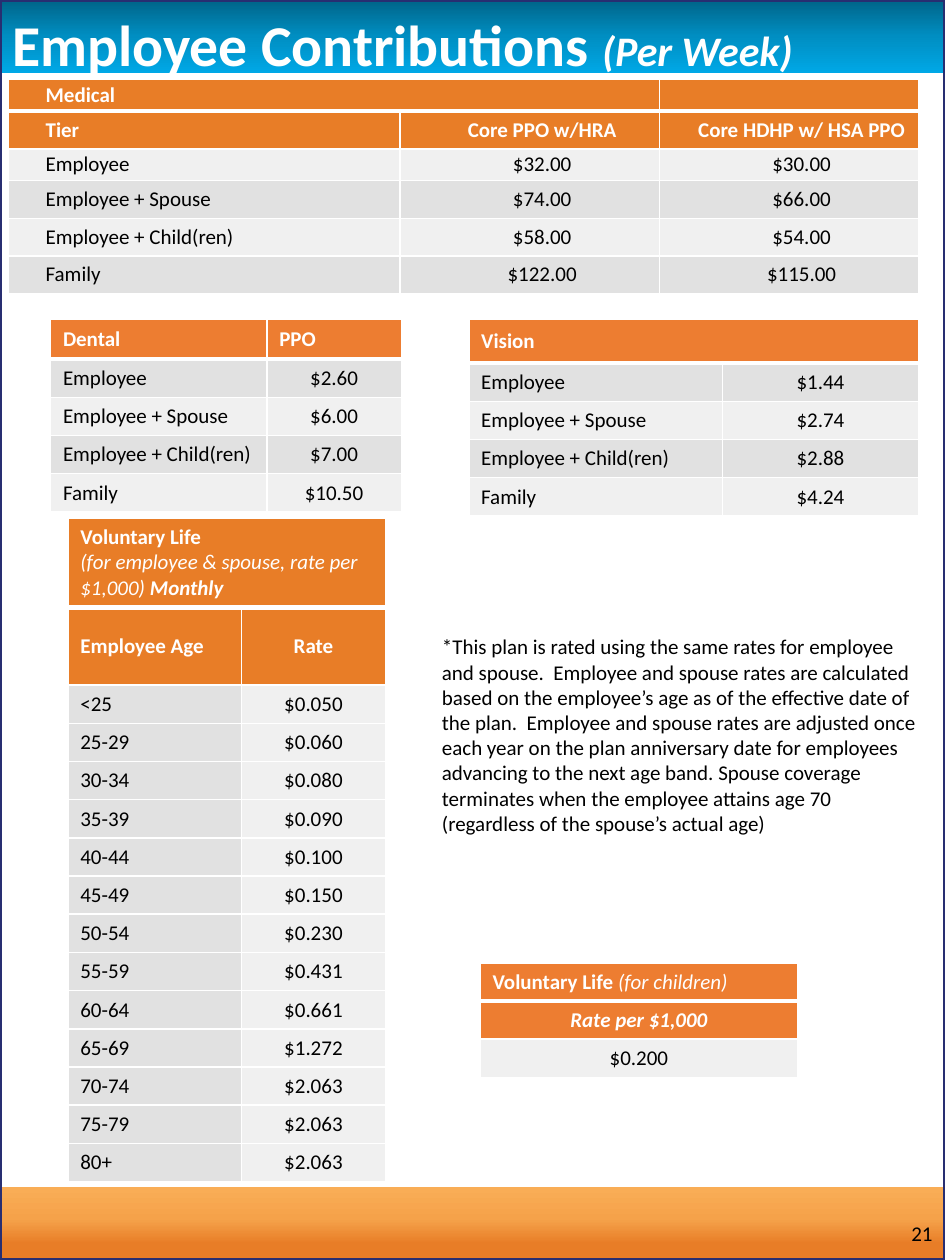
from dataclasses import dataclass
from typing import Callable, Optional

import pptx
import pptx.dml.color
import pptx.enum.shapes
import pptx.enum.text
import pptx.oxml.ns
import pptx.util
from lxml import etree
from pptx.util import Cm

FONT = "Calibri"
WHITE, BLACK = "FFFFFF", "000000"
ORANGE, BRIGHT_ORANGE = "E87D27", "ED7D31"
LIGHT, DARK = "F0F0F0", "E1E1E1"
LEFT = pptx.enum.text.PP_ALIGN.LEFT
CENTER = pptx.enum.text.PP_ALIGN.CENTER
RIGHT = pptx.enum.text.PP_ALIGN.RIGHT
TOP = pptx.enum.text.MSO_ANCHOR.TOP
MIDDLE = pptx.enum.text.MSO_ANCHOR.MIDDLE
RECTANGLE = pptx.enum.shapes.MSO_SHAPE.RECTANGLE
ROW = 0.77
qn = pptx.oxml.ns.qn


@dataclass
class Run:
    text: str
    bold: bool = False
    italic: bool = False
    size: float = 12


@dataclass
class Heading:
    paragraphs: list[list[Run]]
    align: int = LEFT


@dataclass
class RateTable:
    left: float
    top: float
    widths: list[float]
    heights: list[float]
    headings: list[list[Optional[Heading]]]
    rates: list[tuple[str, ...]]
    accent: str
    band: Callable[[int, int], str]
    margins: tuple[float, float, float, float] = (0.25, 0.13, 0.25, 0.13)
    title_span: int = 1


def rgb(value: str) -> pptx.dml.color.RGBColor:
    return pptx.dml.color.RGBColor.from_string(value)


def write(frame, paragraphs: list[list[Run]], color: str, align: int) -> None:
    for index, runs in enumerate(paragraphs):
        paragraph = frame.paragraphs[0] if index == 0 else frame.add_paragraph()
        paragraph.alignment = align
        for part in runs:
            run = paragraph.add_run()
            run.text = part.text
            font = run.font
            font.name, font.size = FONT, pptx.util.Pt(part.size)
            font.bold, font.italic = part.bold, part.italic
            font.color.rgb = rgb(color)


def add_text(slide, box: tuple, runs: list[Run], color: str = BLACK, align: int = LEFT,
             anchor: int = TOP, top_margin: float = 0.13):
    frame = slide.shapes.add_textbox(*map(Cm, box)).text_frame
    frame.word_wrap = True
    frame.vertical_anchor = anchor
    frame.margin_top = Cm(top_margin)
    write(frame, [runs], color, align)
    return frame


def add_band(slide, top: float, height: float, stops: list[tuple[int, str]]) -> None:
    """Full-width bar with a gradient running downwards."""
    bar = slide.shapes.add_shape(RECTANGLE, 0, Cm(top), Cm(19.05), Cm(height))
    bar.shadow.inherit = False
    bar.line.fill.background()
    bar.fill.gradient()
    gradient = bar.fill._xPr.find(qn("a:gradFill"))
    for child in list(gradient):
        gradient.remove(child)
    stop_list = etree.SubElement(gradient, qn("a:gsLst"))
    for percent, color in stops:
        stop = etree.SubElement(stop_list, qn("a:gs"), pos=str(percent * 1000))
        etree.SubElement(stop, qn("a:srgbClr"), val=color)
    etree.SubElement(gradient, qn("a:lin"), ang="5400000", scaled="0")


def set_borders(cell, row: int) -> None:
    """White rules, heavier under the first row."""
    properties = cell._tc.get_or_add_tcPr()
    points = {"lnL": 1, "lnR": 1, "lnT": 3 if row == 1 else 1, "lnB": 3 if row == 0 else 1}
    for side, width in points.items():
        line = etree.SubElement(properties, qn(f"a:{side}"), w=str(pptx.util.Pt(width)))
        fill = etree.SubElement(line, qn("a:solidFill"))
        etree.SubElement(fill, qn("a:srgbClr"), val=WHITE)


def style_cell(cell, row: int, fill: str, margins: tuple) -> None:
    set_borders(cell, row)
    cell.fill.solid()
    cell.fill.fore_color.rgb = rgb(fill)
    cell.vertical_anchor = MIDDLE
    cell.margin_left, cell.margin_top, cell.margin_right, cell.margin_bottom = map(Cm, margins)


def add_rates(slide, plan: RateTable) -> None:
    grid = slide.shapes.add_table(
        len(plan.heights), len(plan.widths), Cm(plan.left), Cm(plan.top),
        Cm(sum(plan.widths)), Cm(sum(plan.heights))).table
    grid.first_row = grid.horz_banding = False
    for column, width in zip(grid.columns, plan.widths):
        column.width = Cm(width)
    for line, height in zip(grid.rows, plan.heights):
        line.height = Cm(height)

    for row, headings in enumerate(plan.headings):
        for col, heading in enumerate(headings):
            cell = grid.cell(row, col)
            style_cell(cell, row, plan.accent, plan.margins)
            if heading:
                write(cell.text_frame, heading.paragraphs, WHITE, heading.align)
            else:
                etree.SubElement(cell.text_frame.paragraphs[0]._p, qn("a:endParaRPr"), sz="1200")

    for index, values in enumerate(plan.rates):
        row = index + len(plan.headings)
        for col, value in enumerate(values):
            cell = grid.cell(row, col)
            style_cell(cell, row, plan.band(index, col), plan.margins)
            write(cell.text_frame, [[Run(value)]], BLACK, CENTER if value[0] == "$" else LEFT)

    if plan.title_span > 1:
        grid.cell(0, 0).merge(grid.cell(0, plan.title_span - 1))


def label(text: str, align: int = LEFT) -> Heading:
    return Heading([[Run(text, bold=True)]], align)


def light_first(row: int, col: int) -> str:
    return (LIGHT, DARK)[row % 2]


def dark_first(row: int, col: int) -> str:
    return (DARK, LIGHT)[row % 2]


def by_column(row: int, col: int) -> str:
    return (DARK, LIGHT)[col]


TIERS = ["Employee", "Employee + Spouse", "Employee + Child(ren)", "Family"]
AGES = ["<25", *(f"{age}-{age + 4}" for age in range(25, 80, 5)), "80+"]
LIFE_RATES = ["$0.050", "$0.060", "$0.080", "$0.090", "$0.100", "$0.150", "$0.230",
              "$0.431", "$0.661", "$1.272", "$2.063", "$2.063", "$2.063"]

PLANS = [
    # Medical
    RateTable(0.16, 1.6, [7.9, 5.23, 5.23], [0.64, 0.76, 0.64, 0.76, 0.76, 0.76],
              [[label("Medical"), None, None],
               [label("Tier"), label("Core PPO w/HRA", CENTER),
                label("Core HDHP w/ HSA PPO", CENTER)]],
              list(zip(TIERS, ["$32.00", "$74.00", "$58.00", "$122.00"],
                       ["$30.00", "$66.00", "$54.00", "$115.00"])),
              ORANGE, light_first, (0.76, 0, 0.25, 0), title_span=2),
    # Dental
    RateTable(1.02, 6.43, [4.36, 2.71], [0.81] + [ROW] * 4,
              [[label("Dental"), label("PPO")]],
              list(zip(TIERS, ["$2.60", "$6.00", "$7.00", "$10.50"])),
              BRIGHT_ORANGE, dark_first),
    # Vision
    RateTable(9.45, 6.43, [5.11, 3.96], [0.89] + [ROW] * 4,
              [[label("Vision"), None]],
              list(zip(TIERS, ["$1.44", "$2.74", "$2.88", "$4.24"])),
              BRIGHT_ORANGE, dark_first, title_span=2),
    # Voluntary life for employee and spouse
    RateTable(1.37, 10.44, [3.5, 2.9], [1.8, 1.57] + [ROW] * len(AGES),
              [[Heading([[Run("Voluntary Life", bold=True)],
                         [Run("(for employee & spouse, rate per $1,000) ", italic=True),
                          Run("Monthly", bold=True, italic=True)]]), None],
               [label("Employee Age"), label("Rate", CENTER)]],
              list(zip(AGES, LIFE_RATES)), ORANGE, by_column, title_span=2),
    # Voluntary life for children
    RateTable(9.68, 19.41, [6.4], [0.75, ROW, ROW],
              [[Heading([[Run("Voluntary Life ", bold=True),
                          Run("(for children)", italic=True)]])],
               [Heading([[Run("Rate per $1,000", bold=True, italic=True)]], CENTER)]],
              [("$0.200",)], BRIGHT_ORANGE, light_first),
]

NOTE = ("*This plan is rated using the same rates for employee and spouse.  Employee and spouse "
        "rates are calculated based on the employee’s age as of the effective date of the plan.  "
        "Employee and spouse rates are adjusted once each year on the plan anniversary date for "
        "employees advancing to the next age band. Spouse coverage terminates when the employee "
        "attains age 70 (regardless of the spouse’s actual age)")


def main() -> None:
    deck = pptx.Presentation()
    deck.slide_width, deck.slide_height = Cm(19.05), Cm(25.4)
    slide = deck.slides.add_slide(deck.slide_layouts[6])

    # Page frame
    add_band(slide, 23.93, 1.47, [(1, "F9AD56"), (44, "F5A24A"), (78, ORANGE)])
    add_band(slide, 0, 1.47, [(0, "006488"), (50, "008EC2"), (100, "00A8E6")])
    border = slide.shapes.add_shape(RECTANGLE, 0, 0, deck.slide_width, deck.slide_height)
    border.shadow.inherit = False
    border.fill.background()
    border.line.color.rgb = rgb("282E71")
    border.line.width = pptx.util.Pt(2.5)

    # Title
    title = add_text(slide, (0, 0, 19.05, 2.62),
                     [Run("Employee Contributions ", bold=True, size=33),
                      Run("(Per Week)", bold=True, italic=True, size=24)], WHITE, top_margin=0.33)
    title.paragraphs[0].line_spacing = 0.9

    # Rates, note and page number
    for plan in PLANS:
        add_rates(slide, plan)
    add_text(slide, (8.66, 12.65, 10.08, 4.37), [Run(NOTE)])
    add_text(slide, (14.76, 24.43, 4.29, 0.84), [Run("21")], align=RIGHT, anchor=MIDDLE)

    deck.save("out.pptx")


if __name__ == "__main__":
    main()
